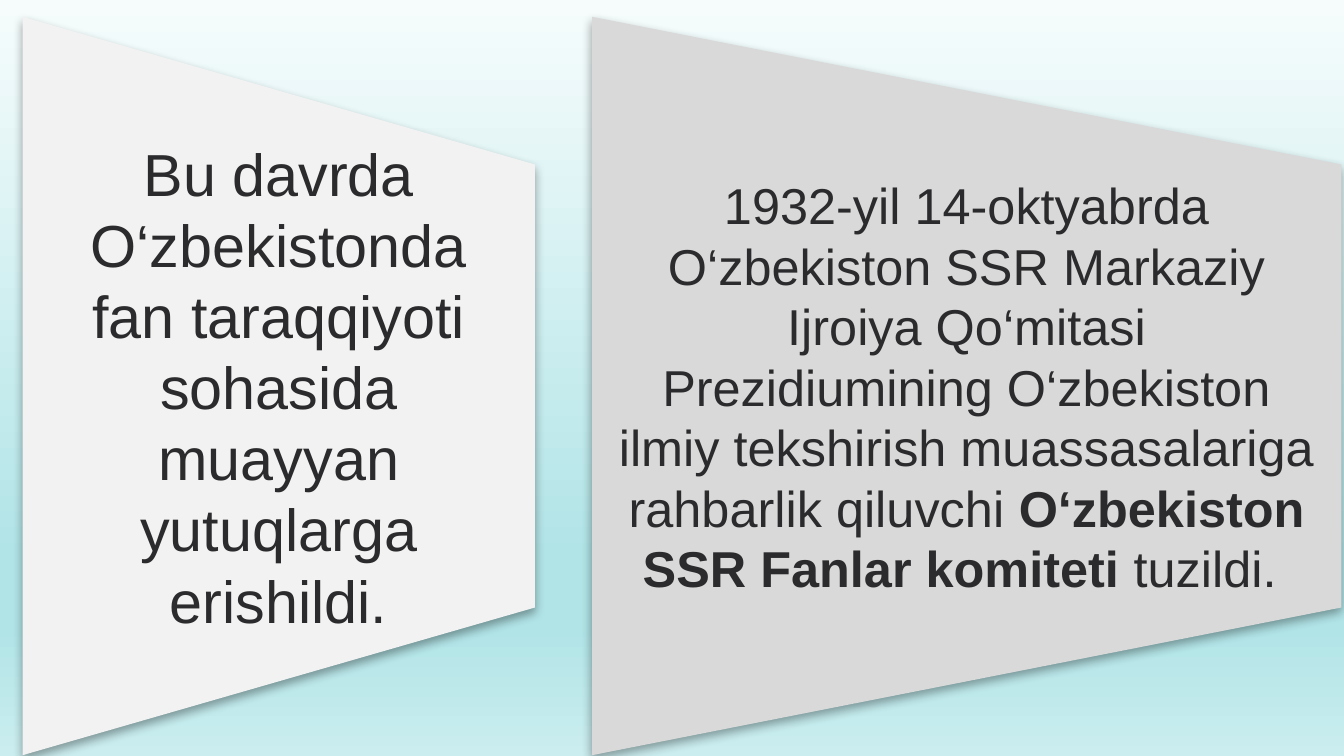
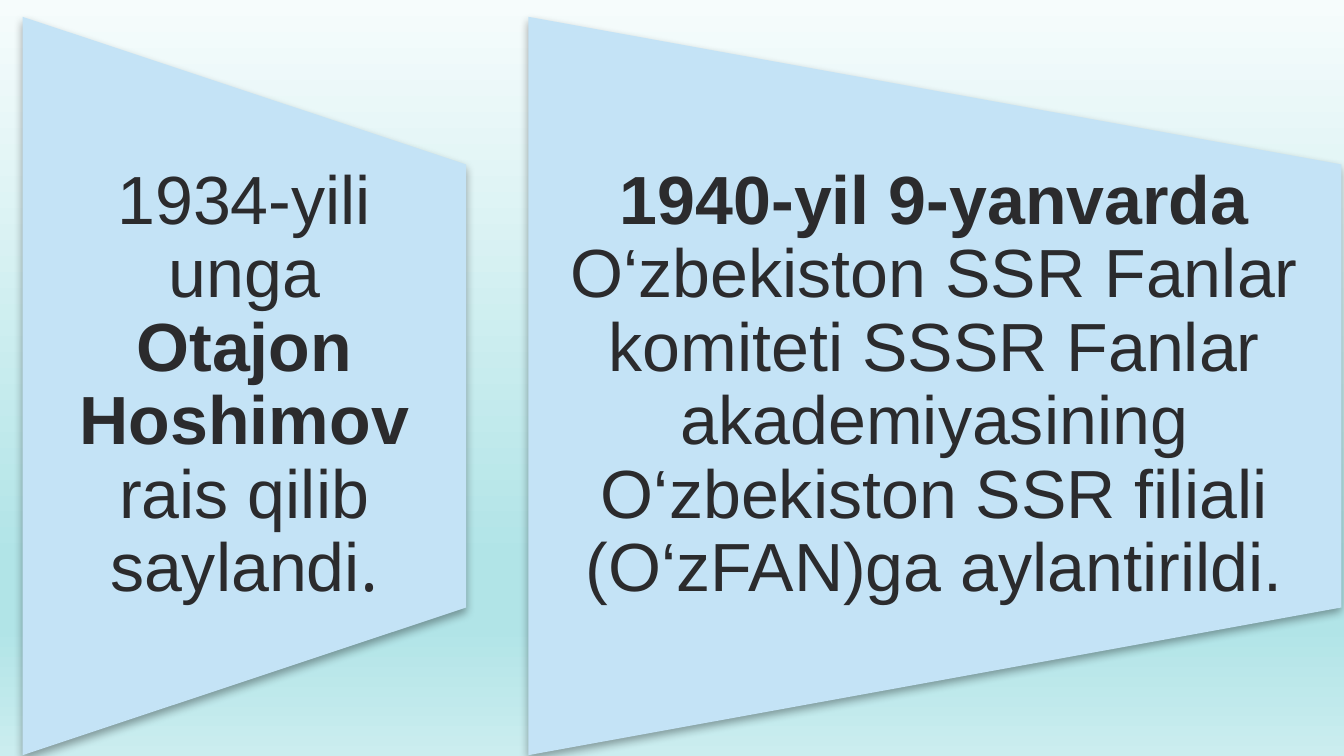
from lxml.etree import SubElement
from pptx import Presentation
from pptx.dml.color import RGBColor
from pptx.enum.shapes import MSO_SHAPE
from pptx.enum.text import MSO_ANCHOR, PP_ALIGN
from pptx.oxml.ns import qn
from pptx.util import Cm, Pt

FONT = "Arial"
TEXT_COLOR = "2B2B2D"
BACKGROUND = [(0, "F6FCFC"), (74, "B1E4E7"), (83, "B1E4E7"), (100, "CBEDEF")]
LEFT, RIGHT = 0.27, 15.97
TOP, HEIGHT = 0.2, 8.79

SLIDES = [
    dict(size=20, spacing=1.0, widths=(6.1, 8.92), cards=[
        dict(fill="F2F2F2", inset=0.36, runs=[
            ("Bu davrda O‘zbekistonda fan taraqqiyoti sohasida muayyan "
             "yutuqlarga erishildi.", False, FONT)]),
        dict(fill="D9D9D9", inset=0.3, size=17, runs=[
            ("1932-yil 14-oktyabrda O‘zbekiston SSR Markaziy Ijroiya Qo‘mitasi "
             "Prezidiumining O‘zbekiston ilmiy tekshirish muassasalariga "
             "rahbarlik qiluvchi ", False, FONT),
            ("O‘zbekiston SSR Fanlar komiteti ", True, FONT),
            ("tuzildi. ", False, FONT)]),
    ]),
    dict(size=23, spacing=0.9, widths=(5.28, 9.68), cards=[
        dict(fill="C4E3F6", inset=0.41, runs=[
            ("1934-yili unga ", False, FONT),
            ("Otajon Hoshimov ", True, FONT),
            ("rais qilib saylandi", False, FONT),
            (".", False, "Open Sans")]),
        dict(fill="C4E3F6", inset=0.41, runs=[
            ("1940-yil 9-yanvarda ", True, FONT),
            ("O‘zbekiston SSR Fanlar komiteti SSSR Fanlar akademiyasining "
             "O‘zbekiston SSR filiali (O‘zFAN)ga aylantirildi.", False, FONT)]),
    ]),
]


def rgb(value):
    return RGBColor.from_string(value)


def set_background(master):
    fill = master.background.fill
    fill.gradient()
    fill.gradient_angle = 270
    stops = next(master.element.iter(qn("a:gsLst")))
    for stop in list(stops):
        stops.remove(stop)
    for position, color in BACKGROUND:
        stop = SubElement(stops, qn("a:gs"), pos=str(position * 1000))
        SubElement(stop, qn("a:srgbClr"), val=color)


def add_shadow(sp):
    sp.shadow.inherit = False
    effects = sp.element.spPr.find(qn("a:effectLst"))
    shadow = SubElement(effects, qn("a:outerShdw"), blurRad=str(Pt(3.1)),
                        dist=str(Pt(1.8)), dir="5400000", rotWithShape="0")
    color = SubElement(shadow, qn("a:srgbClr"), val="000000")
    SubElement(color, qn("a:alpha"), val="35000")


def add_panel(s, left, top, width, height, fill):
    sp = s.shapes.add_shape(
        MSO_SHAPE.FLOWCHART_MANUAL_OPERATION,
        Cm(left + (width - height) / 2), Cm(top + (height - width) / 2),
        Cm(height), Cm(width))
    sp.rotation = 270
    sp.fill.solid()
    sp.fill.fore_color.rgb = rgb(fill)
    sp.line.fill.background()
    add_shadow(sp)


def add_text(s, left, top, width, height, runs, size, spacing, inset):
    tf = s.shapes.add_textbox(Cm(left), Cm(top), Cm(width), Cm(height)).text_frame
    tf.word_wrap = True
    tf.vertical_anchor = MSO_ANCHOR.MIDDLE
    tf.margin_left = tf.margin_right = Cm(inset)
    tf.margin_top = tf.margin_bottom = 0
    p = tf.paragraphs[0]
    p.alignment = PP_ALIGN.CENTER
    p.line_spacing = spacing
    for text, bold, font in runs:
        r = p.add_run()
        r.text = text
        r.font.name = font
        r.font.size = Pt(size)
        r.font.bold = bold
        r.font.color.rgb = rgb(TEXT_COLOR)


def add_card(s, left, top, width, height, fill, runs, size, spacing, inset):
    add_panel(s, left, top, width, height, fill)
    add_text(s, left, top + height / 5, width, height * 3 / 5,
             runs, size, spacing, inset)


def add_card_slide(prs, size, spacing, widths, cards):
    s = prs.slides.add_slide(prs.slide_layouts[6])
    lefts = (LEFT, RIGHT - widths[1])
    for left, width, card in zip(lefts, widths, cards):
        add_card(s, left, TOP, width, HEIGHT,
                 **{"size": size, "spacing": spacing, **card})


def main():
    prs = Presentation()
    prs.slide_width, prs.slide_height = Cm(16), Cm(9)
    set_background(prs.slide_master)
    for content in SLIDES:
        add_card_slide(prs, **content)
    prs.save("out.pptx")


if __name__ == "__main__":
    main()
